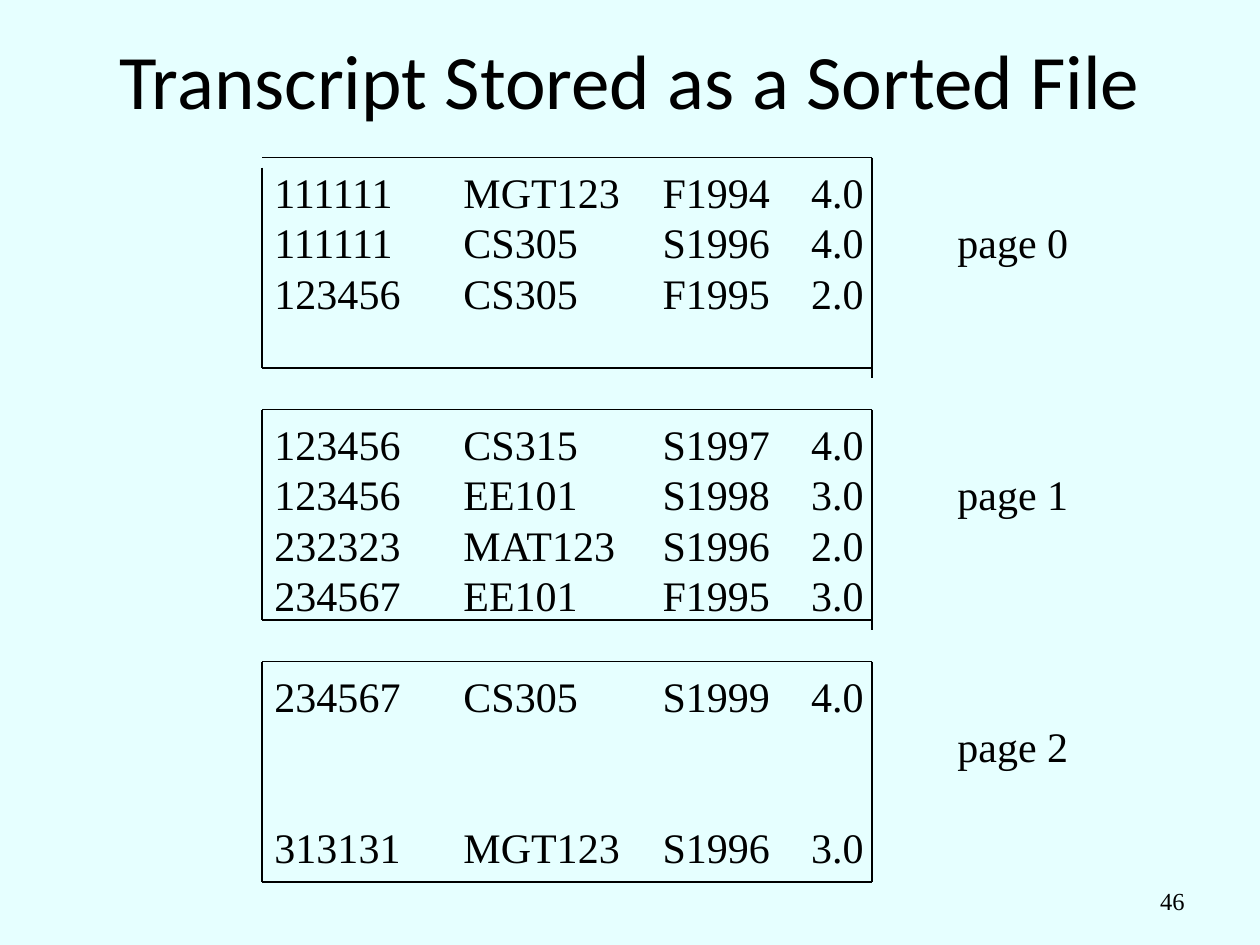
from lxml import etree
from pptx import Presentation
from pptx.dml.color import RGBColor
from pptx.enum.shapes import MSO_CONNECTOR
from pptx.enum.text import MSO_ANCHOR, PP_ALIGN
from pptx.oxml.ns import qn
from pptx.util import Inches, Pt

BLACK = "000000"
SERIF = "Times New Roman"
LEFT, RIGHT = 2.08, 6.92
ROW_PT = 28.8
TAB_STOPS = (1.5, 3.08, 4.26, 5.42)  # course, semester, grade, page label

# Each row: rows left empty above it, then its tab-separated fields
ROWS = [
    (0, ("111111", "MGT123", "F1994", "4.0")),
    (0, ("111111", "CS305", "S1996", "4.0", "page 0")),
    (0, ("123456", "CS305", "F1995", "2.0")),
    (2, ("123456", "CS315", "S1997", "4.0")),
    (0, ("123456", "EE101", "S1998", "3.0", "page 1")),
    (0, ("232323", "MAT123", "S1996", "2.0")),
    (0, ("234567", "EE101", "F1995", "3.0")),
    (1, ("234567", "CS305", "S1999", "4.0")),
    (0, ("", "", "", "", "page 2")),
    (1, ("313131", "MGT123", "S1996", "3.0")),
]

# Page frames: top, bottom, start of left side, end of right side
FRAMES = [
    (1.25, 2.92, 1.33, 3),
    (3.25, 4.92, 3.25, 5),
    (5.25, 7, 5.25, 7),
]


def color(value):
    return RGBColor.from_string(value)


def format_paragraph(p, font, size, **values):
    for name, value in values.items():
        setattr(p, name, value)
    for name, value in {"name": font, "size": Pt(size), "bold": False}.items():
        setattr(p.font, name, value)
    p.font.color.rgb = color(BLACK)


def add_title(s, text):
    sp = s.shapes.title
    box = {"left": 0.75, "top": 0, "width": 8.5, "height": 1.25}
    for name, value in box.items():
        setattr(sp, name, Inches(value))
    tf = sp.text_frame
    tf.text = text
    tf.vertical_anchor = MSO_ANCHOR.MIDDLE
    format_paragraph(tf.paragraphs[0], "Calibri", 44, alignment=PP_ALIGN.CENTER)


def add_text_box(s, left, top, width, height, anchor):
    sp = s.shapes.add_textbox(*map(Inches, (left, top, width, height)))
    tf = sp.text_frame
    tf.word_wrap = True
    tf.vertical_anchor = anchor
    return tf


def set_tabs(p):
    # Tab list goes before the default run properties
    pPr = p._p.get_or_add_pPr()
    tab_list = etree.Element(qn("a:tabLst"))
    for stop in TAB_STOPS:
        etree.SubElement(tab_list, qn("a:tab"), pos=str(Inches(stop)), algn="l")
    pPr.find(qn("a:defRPr")).addprevious(tab_list)


def add_records(s):
    tf = add_text_box(s, LEFT, 1.27, 6.51, 6.09, MSO_ANCHOR.TOP)
    for i, (gap, fields) in enumerate(ROWS):
        p = tf.add_paragraph() if i else tf.paragraphs[0]
        r = p.add_run()
        r.text = "\t".join(fields)
        format_paragraph(p, SERIF, 24, line_spacing=Pt(ROW_PT),
                         space_before=Pt(gap * ROW_PT))
        set_tabs(p)
        for name, value in {"name": SERIF, "size": Pt(24)}.items():
            setattr(r.font, name, value)
        r.font.color.rgb = color(BLACK)


def add_line(s, x1, y1, x2, y2):
    line = s.shapes.add_connector(MSO_CONNECTOR.STRAIGHT,
                                  *map(Inches, (x1, y1, x2, y2)))
    line.line.color.rgb = color(BLACK)
    line.line.width = Pt(0.75)
    etree.SubElement(line._element.spPr, qn("a:effectLst"))


def add_frame(s, top, bottom, left_start, right_end):
    add_line(s, LEFT, top, RIGHT, top)
    add_line(s, RIGHT, top, RIGHT, right_end)
    add_line(s, LEFT, bottom, RIGHT, bottom)
    add_line(s, LEFT, left_start, LEFT, bottom)


def add_page_number(s, text):
    tf = add_text_box(s, 7.17, 6.95, 2.33, 0.4, MSO_ANCHOR.MIDDLE)
    p = tf.paragraphs[0]
    r = p.add_run()
    r.text = text
    format_paragraph(p, SERIF, 14, alignment=PP_ALIGN.RIGHT)
    for name, value in {"name": SERIF, "size": Pt(14)}.items():
        setattr(r.font, name, value)
    r.font.color.rgb = color(BLACK)


def main():
    prs = Presentation()
    prs.slide_width, prs.slide_height = Inches(10), Inches(7.5)
    s = prs.slides.add_slide(prs.slide_layouts[5])
    s.background.fill.solid()
    s.background.fill.fore_color.rgb = color("E6FFFF")

    # Page number and title
    add_page_number(s, "46")
    add_title(s, "Transcript Stored as a Sorted File")

    # Records and the frames of the pages that hold them
    add_records(s)
    for frame in FRAMES:
        add_frame(s, *frame)

    prs.save("out.pptx")


if __name__ == "__main__":
    main()
